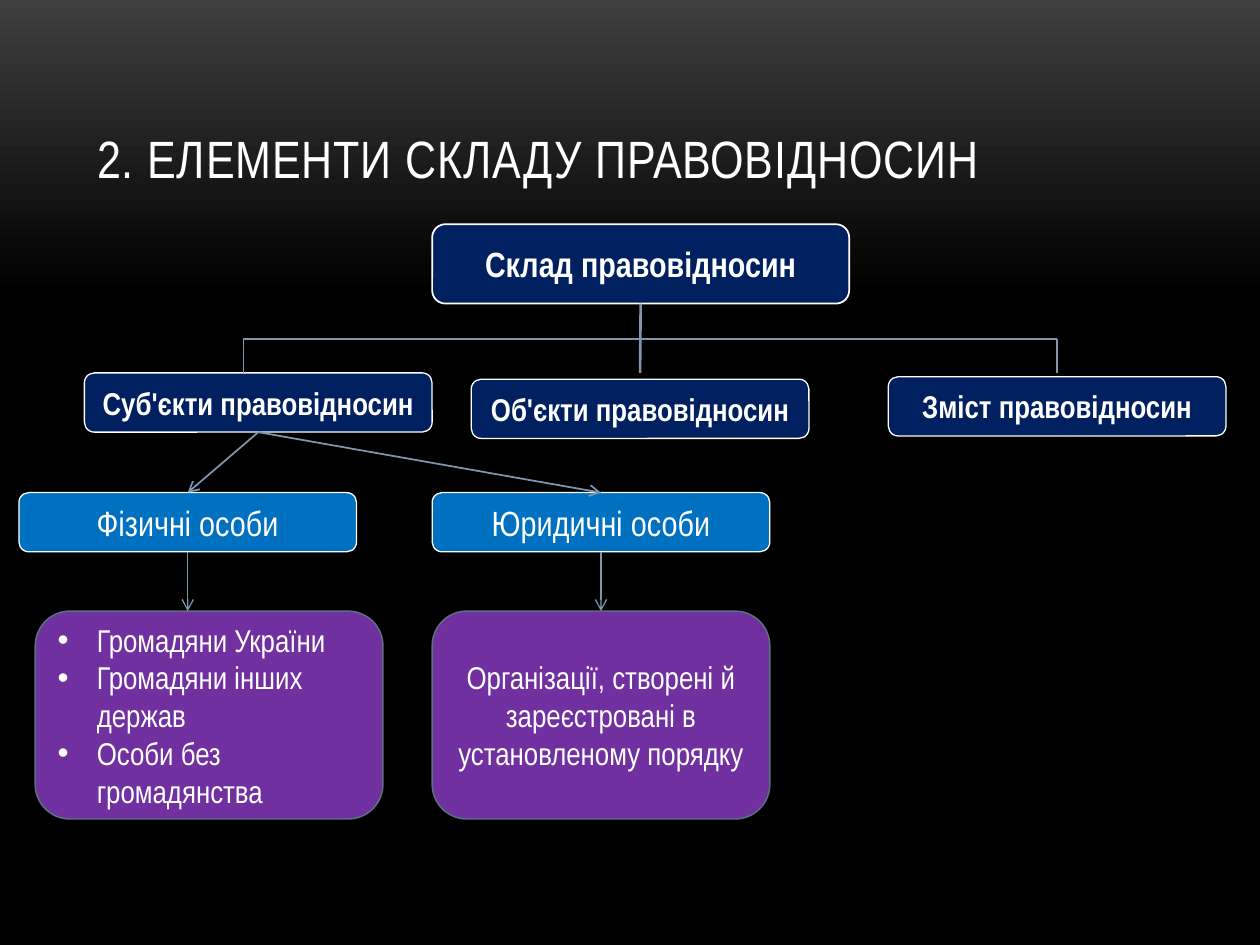
from dataclasses import dataclass

from lxml.etree import SubElement
from pptx import Presentation
from pptx.dml.color import RGBColor
from pptx.enum.shapes import MSO_CONNECTOR, MSO_SHAPE
from pptx.enum.text import MSO_ANCHOR, PP_ALIGN
from pptx.oxml.ns import qn
from pptx.util import Inches, Pt


@dataclass(frozen=True)
class Theme:
    font: str = "Arial Narrow"
    white: str = "FFFFFF"
    black: str = "000000"
    glow: str = "3F3F3F"
    navy: str = "002060"
    blue: str = "0070C0"
    purple: str = "7030A0"
    purple_edge: str = "5D7080"
    connector: str = "7E97AD"
    title_size: int = 30
    large_size: int = 20
    body_size: int = 18


THEME = Theme()
TITLE = "2. ЕЛЕМЕНТИ СКЛАДУ ПРАВОВІДНОСИН"
COLUMNS = {"edge": 0.15, "inset": 0.28, "left": 0.67, "middle": 3.43, "objects": 3.74, "right": 7.05}
ROWS = {"root": 1.78, "rail": 2.69, "elements": 2.96, "persons": 3.91, "details": 4.85}
NARROW, WIDE, LOW, TALL = 2.68, 2.76, 0.47, 1.65
STYLES = {
    "root": (THEME.navy, THEME.white, 1, THEME.large_size, True),
    "element": (THEME.navy, THEME.white, 0.75, THEME.body_size, True),
    "person": (THEME.blue, THEME.white, 0.75, THEME.large_size, False),
    "detail": (THEME.purple, THEME.purple_edge, 0.85, THEME.body_size, False),
}
BOXES = {
    "root": ("root", "middle", "root", 0, 3.31, 0.63, ["Склад правовідносин"]),
    "subjects": ("element", "left", "elements", 0, WIDE, LOW, ["Суб'єкти правовідносин"]),
    "objects": ("element", "objects", "elements", 0.05, NARROW, LOW, ["Об'єкти правовідносин"]),
    "content": ("element", "right", "elements", 0.03, NARROW, LOW, ["Зміст правовідносин"]),
    "natural": ("person", "edge", "persons", 0, NARROW, LOW, ["Фізичні особи"]),
    "legal": ("person", "middle", "persons", 0, NARROW, LOW, ["Юридичні особи"]),
    "citizens": ("detail", "inset", "details", 0, WIDE, TALL,
                 ["Громадяни України", "Громадяни інших держав", "Особи без громадянства"]),
    "organisations": ("detail", "middle", "details", 0, NARROW, TALL,
                      ["Організації, створені й зареєстровані в установленому порядку"]),
}
TOP, BOTTOM = 0, 2
RAIL_ENDS = (1.93, 8.39)
CONNECTORS = [
    (("root", BOTTOM), (5.08, ROWS["elements"]), 1.5, False),
    ((RAIL_ENDS[0], ROWS["rail"]), (RAIL_ENDS[1], ROWS["rail"]), 0.75, False),
    *[((x, ROWS["rail"]), (x, ROWS["elements"]), 0.75, False) for x in RAIL_ENDS],
    (("subjects", BOTTOM), ("natural", TOP), 1, True),
    (("subjects", BOTTOM), ("legal", TOP), 1, True),
    (("natural", BOTTOM), (1.49, ROWS["details"]), 0.75, True),
    (("legal", BOTTOM), ("organisations", TOP), 0.75, True),
]


def color(value):
    return RGBColor.from_string(value)


def format_runs(paragraph, size, bold=False):
    for run in paragraph.runs:
        run.font.name, run.font.size, run.font.bold = THEME.font, Pt(size), bold
        run.font.color.rgb = color(THEME.white)


def add_bullet(paragraph):
    properties = paragraph._p.get_or_add_pPr()
    properties.set("marL", str(Inches(0.31)))
    properties.set("indent", str(-Inches(0.31)))
    SubElement(properties, qn("a:buFont"), typeface="Arial")
    SubElement(properties, qn("a:buChar"), char="•")


def paint_background(slide):
    fill = slide.background.fill
    fill.gradient()
    fill.gradient_angle = 270
    for stop, value, position in zip(fill.gradient_stops, (THEME.glow, THEME.black), (0, 0.31)):
        stop.color.rgb = color(value)
        stop.position = position


def add_title(slide):
    title = slide.shapes.title
    title.left, title.top, title.width, title.height = map(Inches, (0.67, 0.3, 8.67, 1.25))
    frame = title.text_frame
    frame.text = TITLE
    frame.vertical_anchor = MSO_ANCHOR.BOTTOM
    paragraph = frame.paragraphs[0]
    paragraph.alignment = PP_ALIGN.LEFT
    format_runs(paragraph, THEME.title_size)
    paragraph.runs[0].font._element.set("spc", "50")


def add_box(slide, style, column, row, drop, width, height, lines):
    fill, edge, weight, size, bold = STYLES[style]
    place = map(Inches, (COLUMNS[column], ROWS[row] + drop, width, height))
    shape = slide.shapes.add_shape(MSO_SHAPE.ROUNDED_RECTANGLE, *place)
    shape.shadow.inherit = False
    shape.fill.solid()
    shape.fill.fore_color.rgb = color(fill)
    shape.line.color.rgb = color(edge)
    shape.line.width = Pt(weight)
    frame = shape.text_frame
    frame.text = "\n".join(lines)
    frame.word_wrap = True
    frame.vertical_anchor = MSO_ANCHOR.MIDDLE
    for paragraph in frame.paragraphs:
        paragraph.alignment = PP_ALIGN.LEFT if len(lines) > 1 else PP_ALIGN.CENTER
        if len(lines) > 1:
            add_bullet(paragraph)
        format_runs(paragraph, size, bold)
    return shape


def add_link(slide, shapes, start, end, weight, arrow):
    connector = slide.shapes.add_connector(MSO_CONNECTOR.STRAIGHT, 0, 0, 0, 0)
    if start[0] in shapes:
        connector.begin_connect(shapes[start[0]], start[1])
    else:
        connector.begin_x, connector.begin_y = map(Inches, start)
    if end[0] in shapes:
        connector.end_connect(shapes[end[0]], end[1])
    else:
        connector.end_x, connector.end_y = map(Inches, end)
    connector.line.color.rgb = color(THEME.connector)
    connector.line.width = Pt(weight)
    if arrow:
        SubElement(connector.line._get_or_add_ln(), qn("a:tailEnd"), type="arrow")
    SubElement(connector._element.spPr, qn("a:effectLst"))


def main():
    """Build the slide on the elements of legal relations."""
    presentation = Presentation()
    presentation.slide_width, presentation.slide_height = Inches(10), Inches(7.5)
    slide = presentation.slides.add_slide(presentation.slide_layouts[5])
    paint_background(slide)
    add_title(slide)
    shapes = {name: add_box(slide, *box) for name, box in BOXES.items()}
    for link in CONNECTORS:
        add_link(slide, shapes, *link)
    presentation.save("out.pptx")


if __name__ == "__main__":
    main()
